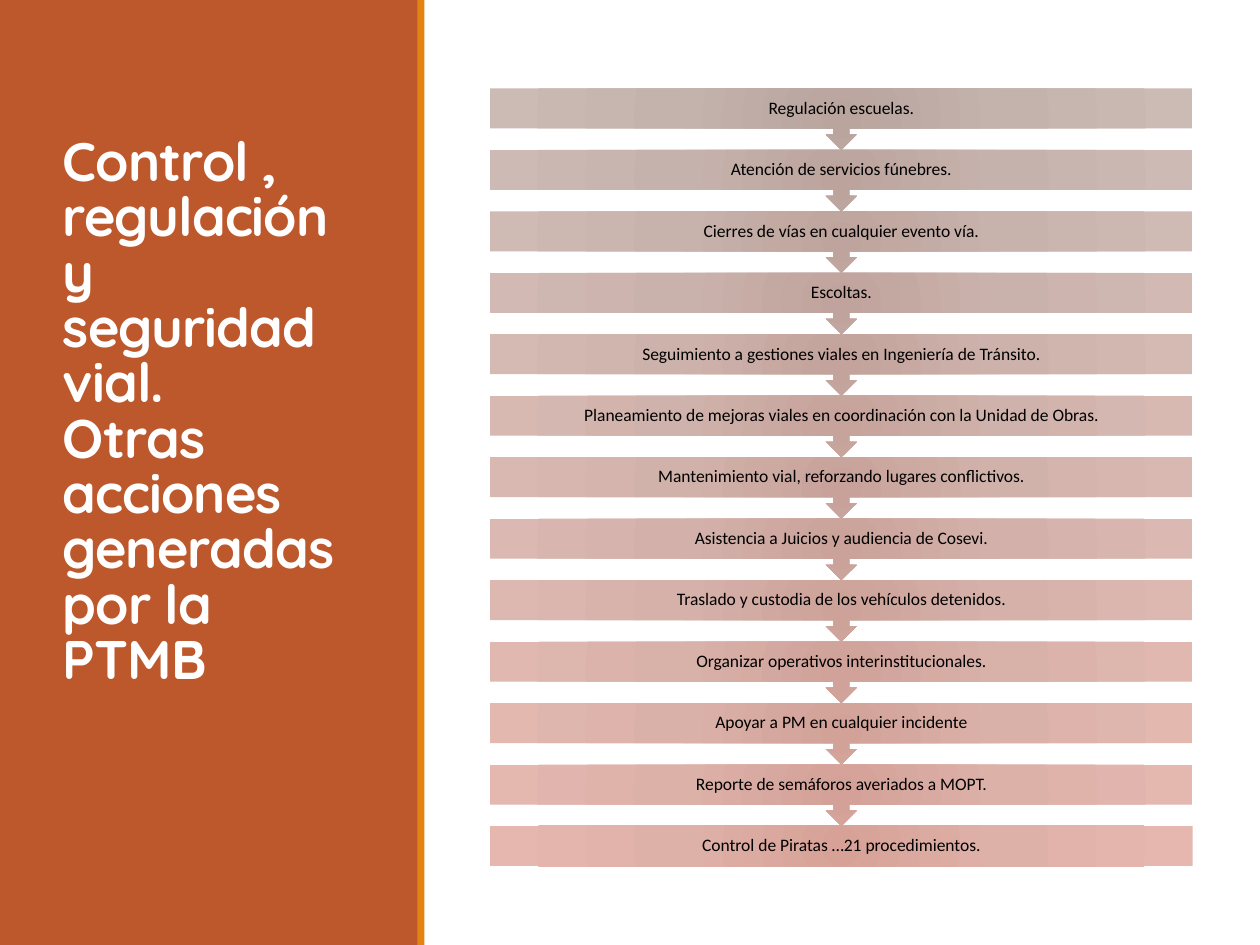
from pptx import Presentation
from pptx.dml.color import RGBColor
from pptx.enum.shapes import MSO_SHAPE as Shape
from pptx.enum.text import MSO_ANCHOR as Anchor, PP_ALIGN as Align
from pptx.oxml import parse_xml
from pptx.oxml.ns import nsdecls
from pptx.util import Pt

WHITE = RGBColor(0xFF, 0xFF, 0xFF)
BLACK = RGBColor(0, 0, 0)
RUST = RGBColor(0xBD, 0x58, 0x2C)
ORANGE = RGBColor(0xE4, 0x83, 0x12)
FIRST_SHADES = (RGBColor(0xB9, 0xA4, 0x9E), RGBColor(0xC4, 0xB2, 0xAD), RGBColor(0xCC, 0xBA, 0xB5))
LAST_SHADES = (RGBColor(0xD7, 0xA1, 0x97), RGBColor(0xDE, 0xB1, 0xA8), RGBColor(0xE6, 0xB7, 0xAE))
STOPS = (0, 45, 100)

TITLE = "Control , regulación y seguridad vial.\nOtras acciones generadas por la PTMB"
ACTIONS = [
    "Regulación escuelas.",
    "Atención de servicios fúnebres.",
    "Cierres de vías en cualquier evento vía.",
    "Escoltas.",
    "Seguimiento a gestiones viales en Ingeniería de Tránsito.",
    "Planeamiento de mejoras viales en coordinación con la Unidad de Obras.",
    "Mantenimiento vial, reforzando lugares conflictivos.",
    "Asistencia a Juicios y audiencia de Cosevi.",
    "Traslado y custodia de los vehículos detenidos.",
    "Organizar operativos interinstitucionales.",
    "Apoyar a PM en cualquier incidente",
    "Reporte de semáforos averiados a MOPT.",
    "Control de Piratas …21 procedimientos.",
]


def add_text(slide, text, left, top, width, height, *, font, size, color,
             bold=False, align=Align.LEFT, line_spacing=1.0, inset=(7.2, 3.6), tracking=0):
    """Add a vertically centred text box, one paragraph per line of text."""
    box = slide.shapes.add_textbox(Pt(left), Pt(top), Pt(width), Pt(height))
    frame = box.text_frame
    frame.word_wrap = True
    frame.vertical_anchor = Anchor.MIDDLE
    frame.margin_left = frame.margin_right = Pt(inset[0])
    frame.margin_top = frame.margin_bottom = Pt(inset[1])
    frame.text = text
    for paragraph in frame.paragraphs:
        paragraph.alignment = align
        paragraph.line_spacing = line_spacing
        for run in paragraph.runs:
            run.font.name = font
            run.font.size = Pt(size)
            run.font.bold = bold
            run.font.color.rgb = color
            if tracking:
                run.font._element.set("spc", str(int(tracking * 100)))


def add_block(slide, preset, left, top, width, height, color=None):
    """Add a shape without line or shadow, filled when a colour is given."""
    block = slide.shapes.add_shape(preset, Pt(left), Pt(top), Pt(width), Pt(height))
    block.shadow.inherit = False
    block.line.fill.background()
    if color is not None:
        block.fill.solid()
        block.fill.fore_color.rgb = color
    return block


def blend(first, last, share):
    """Return the colour lying at a share of the way from first to last."""
    return RGBColor(*(round(a + (b - a) * share) for a, b in zip(first, last)))


def fill_radial(block, shades):
    """Fill a shape with a circular gradient through the given shades."""
    stops = "".join(
        f'<a:gs pos="{stop * 1000}"><a:srgbClr val="{shade}"/></a:gs>'
        for stop, shade in zip(STOPS, shades))
    gradient = parse_xml(
        f'<a:gradFill {nsdecls("a")} rotWithShape="1"><a:gsLst>{stops}</a:gsLst>'
        '<a:path path="circle"><a:fillToRect l="100000" t="100000" r="100000" b="100000"/>'
        '</a:path></a:gradFill>')
    block._element.spPr.prstGeom.addnext(gradient)


def add_title_panel(slide, left, top, width, height):
    """Draw the coloured side panel with its edge stripe and title."""
    add_block(slide, Shape.RECTANGLE, left, top, width, height, RUST)
    add_text(slide, TITLE, left + 28.8, top + 41, 182, 391, font="Quicksand", size=31,
             color=WHITE, bold=True, line_spacing=0.85, tracking=-0.5)
    add_block(slide, Shape.RECTANGLE, left + width - 0.5, top, 4, height, ORANGE)


def add_action_chain(slide, left, top, width, height):
    """Stack the actions as bars, each pointing down to the next one."""
    bar_height = 23
    last = len(ACTIONS) - 1
    pitch = (height - bar_height) / last
    for index in reversed(range(len(ACTIONS))):
        bar_top = top + index * pitch
        if index == last:
            bar = add_block(slide, Shape.RECTANGLE, left, bar_top, width, bar_height)
        else:
            bar = add_block(slide, Shape.UP_ARROW_CALLOUT, left, bar_top, width, pitch)
            bar.rotation = 180
        fill_radial(bar, [blend(a, b, index / last) for a, b in zip(FIRST_SHADES, LAST_SHADES)])
        add_text(slide, ACTIONS[index], left, bar_top, width, bar_height, font="Calibri",
                 size=10, color=BLACK, align=Align.CENTER, line_spacing=0.9, inset=(5.6, 5.6))


def main():
    """Build the slide and save it."""
    deck = Presentation()
    deck.slide_width, deck.slide_height = Pt(720), Pt(540)
    slide = deck.slides.add_slide(deck.slide_layouts[6])
    add_title_panel(slide, 0, 0, 239, 540)
    add_action_chain(slide, 280, 50.5, 401.5, 444.5)
    deck.save("out.pptx")


if __name__ == "__main__":
    main()
